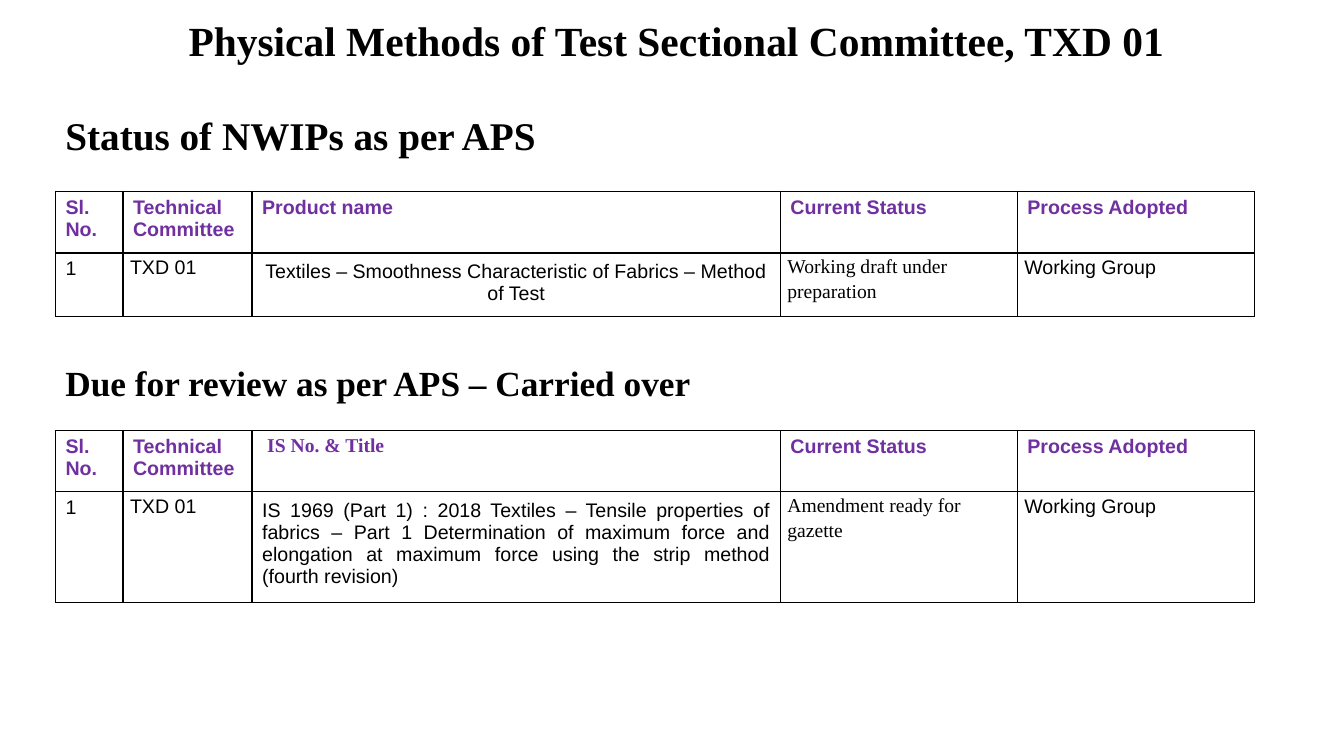
from dataclasses import dataclass

from lxml.etree import SubElement
from pptx import Presentation
from pptx.dml.color import RGBColor
from pptx.enum.text import MSO_ANCHOR, PP_ALIGN as Align
from pptx.oxml.ns import qn
from pptx.util import Inches, Pt


@dataclass(frozen=True)
class Theme:
    sans: str = "Arial"
    serif: str = "Times New Roman"
    text: str = "000000"
    header: str = "7030A0"
    border: str = "000000"
    border_width: float = 1
    title_size: float = 29.6
    status_size: float = 28
    review_size: float = 25.2
    table_size: float = 14


THEME = Theme()
LEFT = 0.55
COLUMN_WIDTHS = (0.67, 1.28, 5.24, 2.35, 2.35)
HEADER_HEIGHT = 0.61

# Cell formats: margins are (horizontal, vertical) in inches
HEADER = dict(bold=True, color=THEME.header)
SERIF_HEADER = dict(HEADER, font=THEME.serif, left=0.15)
NUMBER = dict()
DETAIL = dict(margins=(0.07, 0), spacing=1.15)
SERIF_DETAIL = dict(DETAIL, font=THEME.serif)
CENTERED = dict(margins=(0.1, 0.08), align=Align.CENTER)
JUSTIFIED = dict(margins=(0.1, 0.08), align=Align.JUSTIFY)


def set_attributes(target, values):
    for name, value in values.items():
        setattr(target, name, value)


def write_text(paragraph, text, font, size, bold, color, align, spacing):
    set_attributes(paragraph, {"alignment": align, "line_spacing": spacing})
    run = paragraph.add_run()
    run.text = text
    set_attributes(run.font, {"name": font, "size": Pt(size), "bold": bold})
    run.font.color.rgb = RGBColor.from_string(color)


def set_margins(target, horizontal, vertical, left=None):
    set_attributes(target, {
        "margin_left": Inches(horizontal if left is None else left),
        "margin_right": Inches(horizontal),
        "margin_top": Inches(vertical),
        "margin_bottom": Inches(vertical),
    })


def add_heading(slide, box, text, size, spacing, align=Align.LEFT):
    frame = slide.shapes.add_textbox(*map(Inches, box)).text_frame
    set_attributes(frame, {"word_wrap": True, "vertical_anchor": MSO_ANCHOR.MIDDLE})
    set_margins(frame, 0.1, 0.05)
    write_text(frame.paragraphs[0], text, THEME.serif, size, True,
               THEME.text, align, spacing)


def add_borders(cell):
    properties = cell._tc.get_or_add_tcPr()
    for side in ("lnL", "lnR", "lnT", "lnB"):
        line = SubElement(properties, qn(f"a:{side}"), w=str(Pt(THEME.border_width)))
        fill = SubElement(line, qn("a:solidFill"))
        SubElement(fill, qn("a:srgbClr"), val=THEME.border)


def fill_cell(cell, text, font=THEME.sans, bold=False, color=THEME.text,
              align=Align.LEFT, spacing=1.0, margins=(0.1, 0.05), left=None):
    add_borders(cell)
    cell.fill.background()
    set_margins(cell, *margins, left=left)
    write_text(cell.text_frame.paragraphs[0], text, font, THEME.table_size,
               bold, color, align, spacing)


def add_status_table(slide, left, top, body_height, rows):
    heights = (HEADER_HEIGHT, body_height)
    box = (left, top, sum(COLUMN_WIDTHS), sum(heights))
    table = slide.shapes.add_table(
        len(rows), len(COLUMN_WIDTHS), *map(Inches, box)).table
    set_attributes(table, {"first_row": False, "horz_banding": False})
    for column, width in zip(table.columns, COLUMN_WIDTHS):
        column.width = Inches(width)
    for row, height, entries in zip(table.rows, heights, rows):
        row.height = Inches(height)
        for cell, (text, style) in zip(row.cells, entries):
            fill_cell(cell, text, **style)


def status_rows(subject, subject_style, item, item_style, status):
    return (
        (("Sl. No.", HEADER), ("Technical Committee", HEADER),
         (subject, subject_style), ("Current Status", HEADER),
         ("Process Adopted", HEADER)),
        (("1", NUMBER), ("TXD 01", DETAIL), (item, item_style),
         (status, SERIF_DETAIL), ("Working Group", DETAIL)),
    )


def build_committee_slide(presentation):
    slide = presentation.slides.add_slide(presentation.slide_layouts[6])

    # Slide title
    add_heading(slide, (LEFT, 0.19, 12.33, 0.5),
                "Physical Methods of Test Sectional Committee, TXD 01",
                THEME.title_size, 0.8, Align.CENTER)

    # New work items
    add_heading(slide, (LEFT, 1.13, 7.28, 0.5), "Status of NWIPs as per APS",
                THEME.status_size, 0.8)
    add_status_table(slide, LEFT, 1.9, 0.6, status_rows(
        "Product name", HEADER,
        "Textiles – Smoothness Characteristic of Fabrics – Method of Test",
        CENTERED, "Working draft under preparation"))

    # Standards due for review
    add_heading(slide, (LEFT, 3.57, 6.91, 0.49),
                "Due for review as per APS – Carried over",
                THEME.review_size, 0.9)
    add_status_table(slide, LEFT, 4.27, 1.04, status_rows(
        "IS No. & Title", SERIF_HEADER,
        "IS 1969 (Part 1) : 2018 Textiles – Tensile properties of fabrics – "
        "Part 1 Determination of maximum force and elongation at maximum "
        "force using the strip method (fourth revision)",
        JUSTIFIED, "Amendment ready for gazette"))


def main():
    presentation = Presentation()
    set_attributes(presentation, {"slide_width": Inches(13.33),
                                  "slide_height": Inches(7.5)})
    build_committee_slide(presentation)
    presentation.save("out.pptx")


if __name__ == "__main__":
    main()
